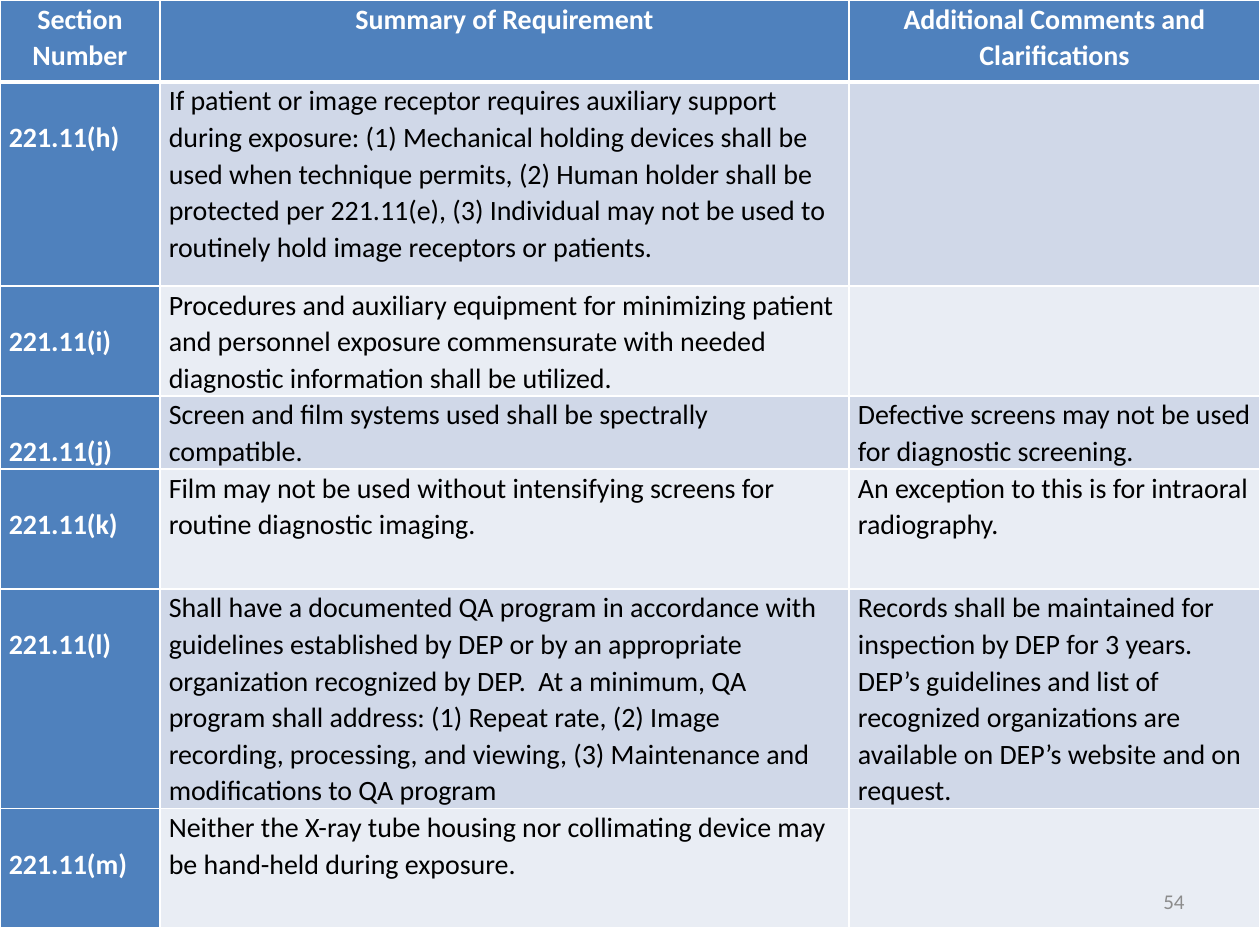
"""Build a slide with a table of X-ray safety requirements."""
from lxml import etree
from pptx import Presentation
from pptx import util as u
from pptx.dml.color import RGBColor
from pptx.enum import text
from pptx.oxml.ns import qn

COLORS = {"head": "4F81BD", "odd": "D0D8E8", "even": "E9EDF4",
          "light": "FFFFFF", "dark": "000000", "muted": "8C8C8C"}
SLIDE = (10, 7.5)
COLUMNS = (1.27, 5.47, 3.26)
ROWS = (0.65, 1.62, 0.86, 0.57, 0.95, 1.73, 0.95)
LINE = 0.29
HEADINGS = ("Section Number", "Summary of Requirement",
            "Additional Comments and Clarifications")
REQUIREMENTS = (
    ("221.11(h)",
     "If patient or image receptor requires auxiliary support during exposure: "
     "(1) Mechanical holding devices shall be used when technique permits, "
     "(2) Human holder shall be protected per 221.11(e), (3) Individual may not "
     "be used to routinely hold image receptors or patients.", ""),
    ("221.11(i)",
     "Procedures and auxiliary equipment for minimizing patient and personnel "
     "exposure commensurate with needed diagnostic information shall be utilized.", ""),
    ("221.11(j)", "Screen and film systems used shall be spectrally compatible.",
     "Defective screens may not be used for diagnostic screening."),
    ("221.11(k)",
     "Film may not be used without intensifying screens for routine diagnostic imaging.",
     "An exception to this is for intraoral radiography."),
    ("221.11(l)",
     "Shall have a documented QA program in accordance with guidelines established "
     "by DEP or by an appropriate organization recognized by DEP.  At a minimum, "
     "QA program shall address: (1) Repeat rate, (2) Image recording, processing, "
     "and viewing, (3) Maintenance and modifications to QA program",
     "Records shall be maintained for inspection by DEP for 3 years.  DEP’s "
     "guidelines and list of recognized organizations are available on DEP’s "
     "website and on request."),
    ("221.11(m)",
     "Neither the X-ray tube housing nor collimating device may be hand-held "
     "during exposure.", ""),
)


def apply(target, values):
    """Set each attribute named in a dict of format values."""
    for name, value in values.items():
        setattr(target, name, value)


def write(frame, words, color, size, bold, **layout):
    """Write one formatted paragraph into a text frame."""
    frame.word_wrap = True
    paragraph = frame.paragraphs[0]
    apply(paragraph, layout)
    run = paragraph.add_run()
    run.text = words
    apply(run.font, {"name": "Calibri", "size": u.Pt(size), "bold": bold})
    run.font.color.rgb = RGBColor.from_string(COLORS[color])


def rule_cell(cell, widths):
    """Draw the cell's borders, given a width in points for each side."""
    properties = cell._tc.get_or_add_tcPr()
    for side, width in widths.items():
        border = etree.SubElement(properties, qn(f"a:ln{side}"), w=str(u.Pt(width)))
        fill = etree.SubElement(border, qn("a:solidFill"))
        etree.SubElement(fill, qn("a:srgbClr"), val=COLORS["light"])


def fill_cell(cell, words, row, column):
    """Format a cell by its place in the table and write its words."""
    heading, section = row == 0, column == 0
    label = heading or section
    rule_cell(cell, {"L": 1, "R": 1, "T": 3 if row == 1 else 1, "B": 3 if heading else 1})
    cell.fill.solid()
    band = "head" if label else "odd" if row % 2 else "even"
    cell.fill.fore_color.rgb = RGBColor.from_string(COLORS[band])
    drop = LINE if section and not heading else 0
    apply(cell, {"margin_left": u.Inches(0.07), "margin_right": u.Inches(0.07),
                 "margin_top": u.Inches(drop), "margin_bottom": 0})
    if words:
        align = text.PP_ALIGN.CENTER if heading else text.PP_ALIGN.LEFT
        write(cell.text_frame, words, "light" if label else "dark", 16, label,
              alignment=align, line_spacing=1.07)


def add_requirements(slide):
    """Add the table across the full width of the slide."""
    frame = slide.shapes.add_table(len(ROWS), len(COLUMNS), 0, 0,
                                   u.Inches(sum(COLUMNS)), u.Inches(sum(ROWS)))
    table = frame.table
    for column, width in zip(table.columns, COLUMNS):
        column.width = u.Inches(width)
    for row, height in zip(table.rows, ROWS):
        row.height = u.Inches(height)
    for row, entries in enumerate((HEADINGS, *REQUIREMENTS)):
        for column, words in enumerate(entries):
            fill_cell(table.cell(row, column), words, row, column)


def add_page_number(slide, number):
    """Add the page number at the lower right."""
    box = slide.shapes.add_textbox(*map(u.Inches, (7.17, 6.95, 2.33, 0.4)))
    box.text_frame.vertical_anchor = text.MSO_ANCHOR.MIDDLE
    write(box.text_frame, number, "muted", 12, False, alignment=text.PP_ALIGN.RIGHT)


def main():
    """Build and save the slide."""
    deck = Presentation()
    deck.slide_width, deck.slide_height = map(u.Inches, SLIDE)
    slide = deck.slides.add_slide(deck.slide_layouts[6])
    add_requirements(slide)
    add_page_number(slide, "54")
    deck.save("out.pptx")


if __name__ == "__main__":
    main()
